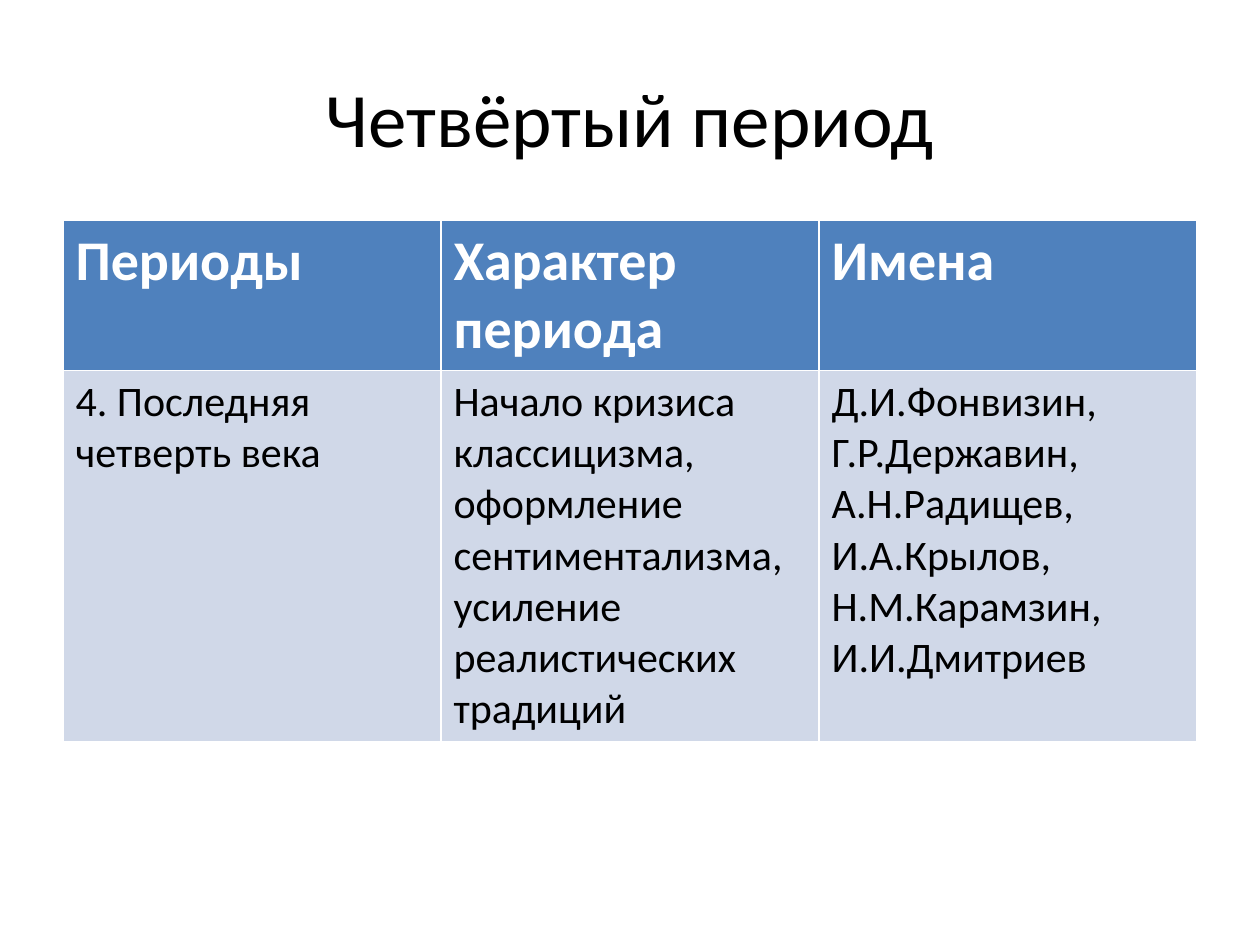
from pptx import Presentation
from pptx.dml.color import RGBColor
from pptx.enum.text import MSO_ANCHOR, PP_ALIGN
from pptx.util import Cm, Pt

HEAD = {"size": Pt(32), "bold": True}
BODY = {"size": Pt(24), "bold": False}

ROWS = [
    ["Периоды", "Характер периода", "Имена"],
    [
        "4. Последняя четверть века",
        "Начало кризиса классицизма, оформление сентиментализма, "
        "усиление реалистических традиций",
        "Д.И.Фонвизин, Г.Р.Державин, А.Н.Радищев, И.А.Крылов, "
        "Н.М.Карамзин, И.И.Дмитриев",
    ],
]
# Height in cm, font format, text colour and fill of each row
LOOKS = [(3, HEAD, "FFFFFF", "4F81BD"), (7.45, BODY, "000000", "D0D8E8")]


def color(code):
    return RGBColor.from_string(code)


class Page:
    font = "Calibri"
    left = Cm(1.27)
    width = Cm(22.86)

    def __init__(self, deck):
        self.slide = deck.slides.add_slide(deck.slide_layouts[5])

    def label(self, frame, text, look, ink):
        """Put one formatted paragraph in a text frame and return it."""
        para = frame.paragraphs[0]
        run = para.add_run()
        run.text = text
        for key, value in {"name": self.font, **look}.items():
            setattr(run.font, key, value)
        run.font.color.rgb = color(ink)
        return para

    def title(self, text, top, height):
        shape = self.slide.shapes.title
        place = {"left": self.left, "top": top,
                 "width": self.width, "height": height}
        for key, value in place.items():
            setattr(shape, key, value)
        frame = shape.text_frame
        frame.vertical_anchor = MSO_ANCHOR.MIDDLE
        para = self.label(frame, text, {"size": Pt(44)}, "000000")
        para.alignment = PP_ALIGN.CENTER

    def table(self, rows, looks, top):
        height = Cm(sum(look[0] for look in looks))
        table = self.slide.shapes.add_table(
            len(rows), len(rows[0]), self.left, top, self.width, height
        ).table
        for row, texts, (tall, look, ink, fill) in zip(table.rows, rows, looks):
            row.height = Cm(tall)
            for cell, text in zip(row.cells, texts):
                cell.fill.solid()
                cell.fill.fore_color.rgb = color(fill)
                self.label(cell.text_frame, text, look, ink)


def main():
    deck = Presentation()
    deck.slide_width, deck.slide_height = Cm(25.4), Cm(19.05)
    page = Page(deck)
    page.title("Четвёртый период", Cm(0.76), Cm(3.18))
    page.table(ROWS, LOOKS, Cm(4.45))
    deck.save("out.pptx")


if __name__ == "__main__":
    main()
